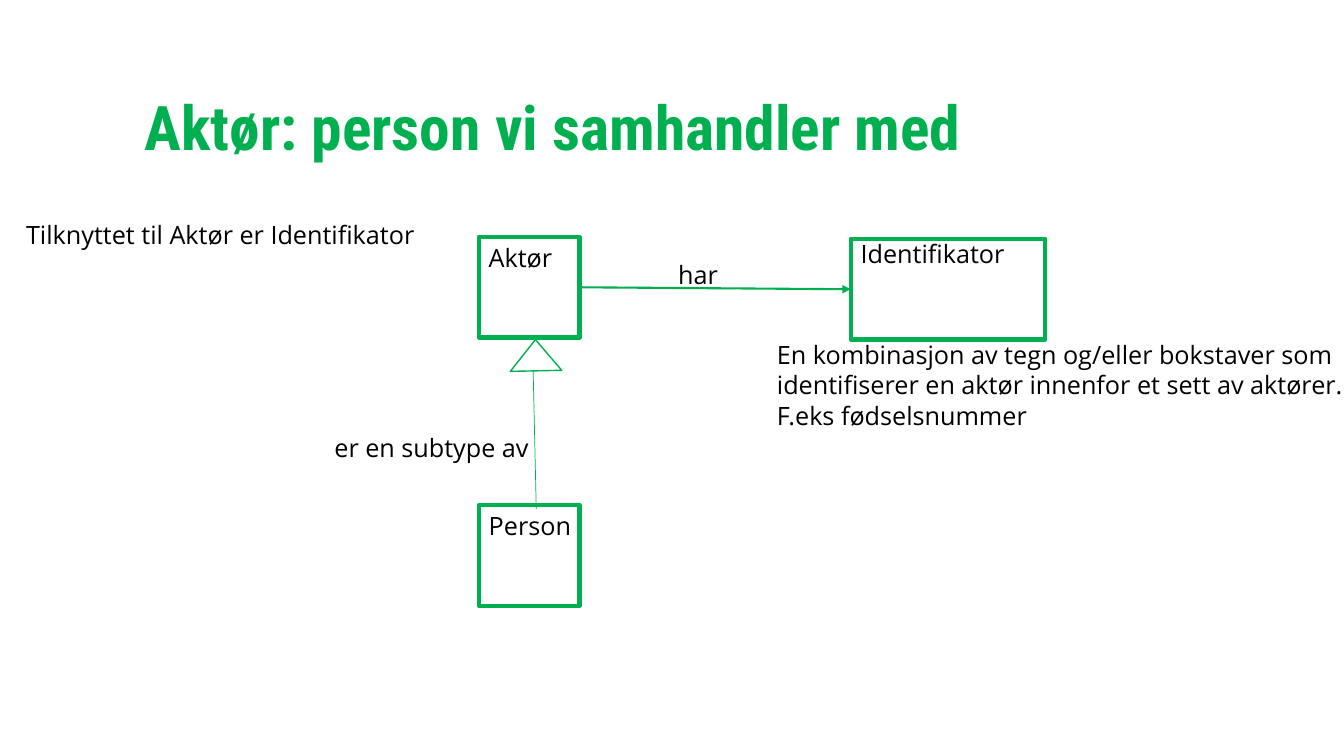
from lxml import etree
from pptx import Presentation
from pptx.dml import color
from pptx.enum import shapes, text
from pptx.oxml import ns
from pptx.util import Pt

GREEN = color.RGBColor(0x00, 0xB0, 0x50)
BLACK = color.RGBColor(0x00, 0x00, 0x00)
LABEL_H = 28.8


def write(tf, lines, size=18, font="Open Sans", rgb=BLACK, bold=False, spacing=1.0):
    """Fill a text frame with one formatted paragraph per line."""
    for i, line in enumerate(lines.split("\n")):
        p = tf.paragraphs[0] if i == 0 else tf.add_paragraph()
        p.alignment = text.PP_ALIGN.LEFT
        p.line_spacing = spacing
        r = p.add_run()
        r.text = line
        r.font.size, r.font.name, r.font.bold = Pt(size), font, bold
        r.font.color.rgb = rgb


def add_label(s, lines, x, y, w, h=LABEL_H, wrap=True):
    """Add a text box."""
    tf = s.shapes.add_textbox(Pt(x), Pt(y), Pt(w), Pt(h)).text_frame
    tf.word_wrap = wrap
    tf.auto_size = text.MSO_AUTO_SIZE.SHAPE_TO_FIT_TEXT
    write(tf, lines)


def add_outline(s, kind, x, y, w, h, weight):
    """Add an unfilled green shape."""
    sp = s.shapes.add_shape(kind, Pt(x), Pt(y), Pt(w), Pt(h))
    sp.shadow.inherit = False
    sp.fill.background()
    sp.line.color.rgb = GREEN
    sp.line.width = Pt(weight)
    return sp


def add_line(s, x1, y1, x2, y2, weight):
    """Add a straight green connector without a shadow."""
    c = s.shapes.add_connector(shapes.MSO_CONNECTOR.STRAIGHT, Pt(x1), Pt(y1), Pt(x2), Pt(y2))
    c.line.color.rgb = GREEN
    c.line.width = Pt(weight)
    etree.SubElement(c._element.spPr, ns.qn("a:effectLst"))
    return c


def add_title(s, lines, x, y, w, h):
    """Place and format the title placeholder."""
    sp = s.shapes.title
    sp.left, sp.top, sp.width, sp.height = Pt(x), Pt(y), Pt(w), Pt(h)
    tf = sp.text_frame
    tf.vertical_anchor = text.MSO_ANCHOR.MIDDLE
    tf.margin_top = 0
    write(tf, lines, size=44, font="Roboto Condensed", rgb=GREEN, bold=True, spacing=0.9)


def add_entity(s, name, x, y, w=72, h=72, label_w=72, label_dy=0, wrap=False):
    """Add an entity box with its name at the top left."""
    sp = add_outline(s, shapes.MSO_SHAPE.RECTANGLE, x, y, w, h, 3)
    add_label(s, name, x, y + label_dy, label_w, wrap=wrap)
    return sp


def add_relation(s, name, source, target):
    """Join two entities with a named arrow."""
    c = add_line(s, 0, 0, 0, 0, 1.5)
    c.begin_connect(source, 3)
    c.end_connect(target, 1)
    etree.SubElement(c.line._get_or_add_ln(), ns.qn("a:tailEnd"), type="triangle")
    add_label(s, name, source.left.pt + 135.4, source.top.pt + 12.2, 43.2, wrap=False)


def add_subtype(s, name, x, y, w, h):
    """Add a generalisation stem, its hollow head and its name."""
    head_h = 22.3
    add_line(s, x + w / 2 + 0.4, y + h, x + w / 2 - 1.8, y + head_h, 0.5)
    head = add_outline(s, shapes.MSO_SHAPE.ISOSCELES_TRIANGLE, x, y, w, head_h, 1)
    head.rotation = 358.8
    add_label(s, name, x - 132.5, y + 62.7, 156.2)


def add_diagram(s, x, y):
    """Draw the actor model from the top left corner of the actor box."""
    actor = add_entity(s, "Aktør", x, y, label_w=60.5)
    add_entity(s, "Person", x, y + 191.5, label_w=74)
    add_subtype(s, "er en subtype av", x + 22.3, y + 73.4, 36.7, 121)
    identifier = add_entity(s, "Identifikator", x + 265.7, y + 1.4, w=139,
                            label_w=139, label_dy=-3.6, wrap=True)
    add_relation(s, "har", actor, identifier)
    add_label(s, "Tilknyttet til Aktør er Identifikator", x - 330.5, y - 15.8, 314)
    add_label(s, "En kombinasjon av tegn og/eller bokstaver som\n"
                 "identifiserer en aktør innenfor et sett av aktører.\n"
                 "F.eks fødselsnummer", x + 205.9, y + 69.8, 422.6, 72.7)


def main():
    """Build and save the slide."""
    prs = Presentation()
    prs.slide_width, prs.slide_height = Pt(960), Pt(540)
    s = prs.slides.add_slide(prs.slide_layouts[5])
    add_title(s, "Aktør: person vi samhandler med", 96, 43.2, 818.6, 103)
    add_diagram(s, 342, 169.2)
    prs.save("out.pptx")


if __name__ == "__main__":
    main()
